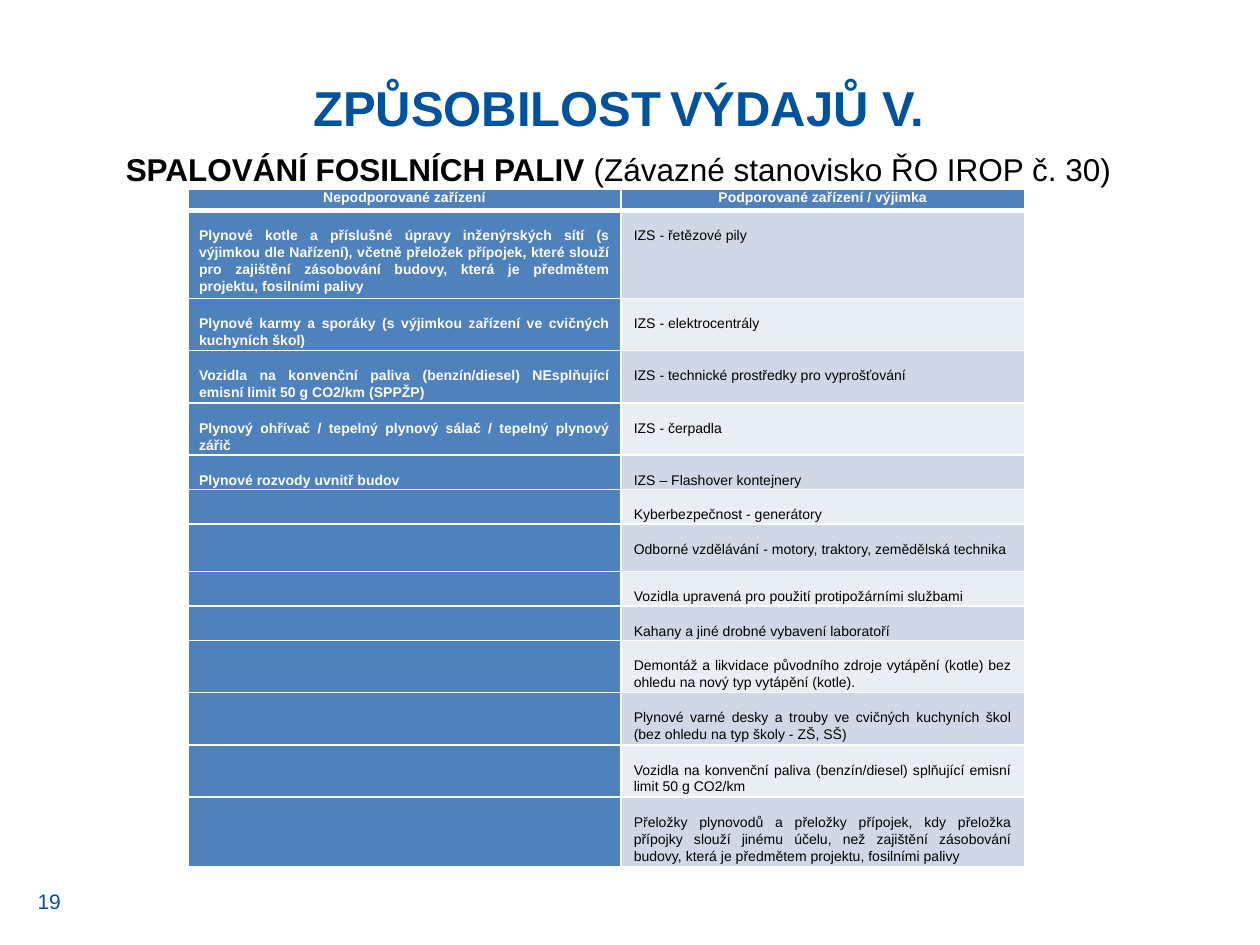
import pptx
import pptx.dml.color
import pptx.enum.text
import pptx.oxml
import pptx.oxml.ns
import pptx.util
from lxml import etree

RGBColor = pptx.dml.color.RGBColor
Pt = pptx.util.Pt
ALIGN = pptx.enum.text.PP_ALIGN
ANCHOR = pptx.enum.text.MSO_ANCHOR

NAVY = RGBColor(0x00, 0x52, 0x9C)
BLUE = RGBColor(0x4F, 0x81, 0xBD)
BAND_DARK = RGBColor(0xD0, 0xD8, 0xE8)
BAND_LIGHT = RGBColor(0xE9, 0xED, 0xF4)
WHITE = RGBColor(0xFF, 0xFF, 0xFF)
BLACK = RGBColor(0x00, 0x00, 0x00)

deck = pptx.Presentation()
deck.slide_width = pptx.util.Inches(10)
deck.slide_height = pptx.util.Inches(7.5)
page = deck.slides.add_slide(deck.slide_layouts[6])
GRID = pptx.util.Inches(0.01)  # all places are counted in hundredths of an inch


def add_text(left, top, width, height, align, spans):
    """Add a text box; spans are (text, size, bold, colour)."""
    box = page.shapes.add_textbox(left * GRID, top * GRID, width * GRID, height * GRID)
    box.text_frame.word_wrap = True
    para = box.text_frame.paragraphs[0]
    para.alignment = align
    para.font.name = "Arial"
    for text, size, bold, colour in spans:
        span = para.add_run()
        span.text = text
        span.font.size = Pt(size)
        span.font.bold = bold
        span.font.color.rgb = colour
    return box


def add_borders(cell, bottom_width):
    """Draw white cell borders, ahead of the fill in the cell properties."""
    properties = cell._tc.get_or_add_tcPr()
    for index, side in enumerate(("lnL", "lnR", "lnT", "lnB")):
        line = etree.Element(pptx.oxml.ns.qn("a:" + side))
        line.set("w", str(Pt(bottom_width if side == "lnB" else 1)))
        fill = etree.SubElement(line, pptx.oxml.ns.qn("a:solidFill"))
        etree.SubElement(fill, pptx.oxml.ns.qn("a:srgbClr")).set("val", str(WHITE))
        properties.insert(index, line)


# Page number, title and subtitle
number = add_text(20, 695, 55, 40, ALIGN.LEFT, [("19", 12, False, NAVY)])
number.text_frame.vertical_anchor = ANCHOR.MIDDLE
add_text(232, 57, 518, 57, ALIGN.CENTER, [
    ("ZPŮSOBILOST", 28, True, NAVY),
    (" ", 18, False, BLACK),
    ("VÝDAJŮ V.", 28, True, NAVY),
])
add_text(90, 114, 857, 40, ALIGN.JUSTIFY, [
    ("SPALOVÁNÍ FOSILNÍCH PALIV ", 18, True, BLACK),
    ("(Závazné stanovisko ŘO IROP č. 30)", 18, False, BLACK),
])

# Table: row height, unsupported equipment, supported equipment
ROWS = [
    (17, "Nepodporované zařízení", "Podporované zařízení / výjimka"),
    (69, "Plynové kotle a příslušné úpravy inženýrských sítí (s výjimkou dle Nařízení), "
         "včetně přeložek přípojek, které slouží pro zajištění zásobování budovy, "
         "která je předmětem projektu, fosilními palivy", "IZS - řetězové pily"),
    (41, "Plynové karmy a sporáky (s výjimkou zařízení ve cvičných kuchyních škol)",
     "IZS - elektrocentrály"),
    (41, "Vozidla na konvenční paliva (benzín/diesel) NEsplňující emisní limit "
         "50 g CO2/km (SPPŽP)", "IZS - technické prostředky pro vyprošťování"),
    (41, "Plynový ohřívač / tepelný plynový sálač / tepelný plynový zářič",
     "IZS - čerpadla"),
    (27, "Plynové rozvody uvnitř budov", "IZS – Flashover kontejnery"),
    (27, "", "Kyberbezpečnost - generátory"),
    (38, "", "Odborné vzdělávání - motory, traktory, zemědělská technika"),
    (27, "", "Vozidla upravená pro použití protipožárními službami"),
    (27, "", "Kahany a jiné drobné vybavení laboratoří"),
    (41, "", "Demontáž a likvidace původního zdroje vytápění (kotle) bez ohledu "
             "na nový typ vytápění (kotle)."),
    (41, "", "Plynové varné desky a trouby ve cvičných kuchyních škol "
             "(bez ohledu na typ školy - ZŠ, SŠ)"),
    (41, "", "Vozidla na konvenční paliva (benzín/diesel) splňující emisní limit "
             "50 g CO2/km"),
    (55, "", "Přeložky plynovodů a přeložky přípojek, kdy přeložka přípojky slouží "
             "jinému účelu, než zajištění zásobování budovy, která je předmětem "
             "projektu, fosilními palivy"),
]
COLUMNS = (344, 320)
table = page.shapes.add_table(
    len(ROWS), len(COLUMNS), 149 * GRID, 150 * GRID,
    sum(COLUMNS) * GRID, sum(row[0] for row in ROWS) * GRID).table
for column, width in zip(table.columns, COLUMNS):
    column.width = width * GRID

for r, (height, *texts) in enumerate(ROWS):
    table.rows[r].height = height * GRID
    header = r == 0
    for c, text in enumerate(texts):
        cell = table.cell(r, c)
        on_blue = header or c == 0
        cell.margin_left = cell.margin_right = 0 if header else (9 + c) * GRID
        cell.margin_top = 0 if header else 13 * GRID
        cell.margin_bottom = 0
        cell.fill.solid()
        cell.fill.fore_color.rgb = BLUE if on_blue else (BAND_LIGHT, BAND_DARK)[r % 2]
        add_borders(cell, 3 if header else 1)
        para = cell.text_frame.paragraphs[0]
        para.text = text
        para.alignment = ALIGN.CENTER if header else ALIGN.JUSTIFY
        para.line_spacing = 1.07
        para.font.name = "Arial"
        para.font.size = Pt(8)
        para.font.bold = on_blue
        para.font.color.rgb = WHITE if on_blue else BLACK

deck.save("out.pptx")
